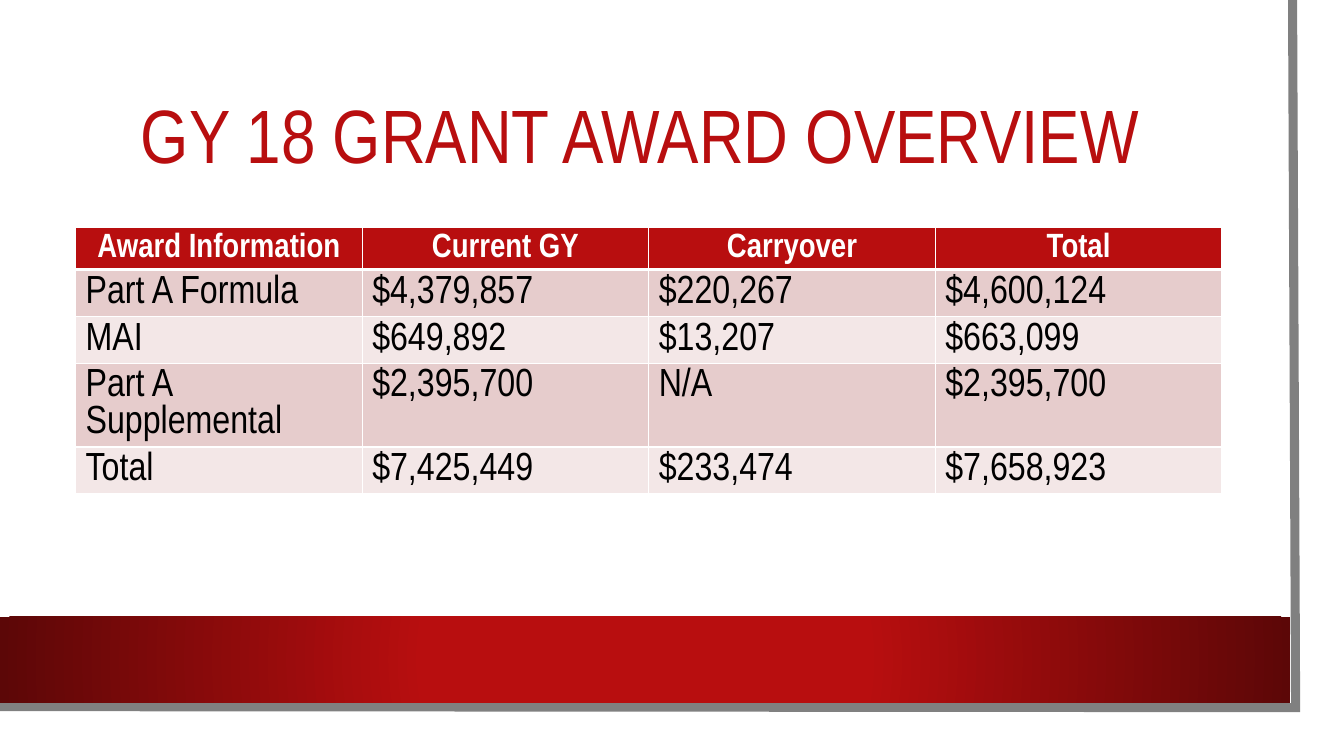
from lxml.etree import SubElement
from pptx import Presentation
from pptx.dml.color import RGBColor
from pptx.enum.shapes import MSO_SHAPE
from pptx.enum.text import MSO_ANCHOR, MSO_AUTO_SIZE, PP_ALIGN
from pptx.oxml.ns import qn
from pptx.util import Inches, Pt

# Content
TITLE = "GY 18 GRANT AWARD OVERVIEW "
AWARDS = [
    ("Award Information", "Current GY", "Carryover", "Total"),
    ("Part A Formula", "$4,379,857", "$220,267", "$4,600,124"),
    ("MAI", "$649,892", "$13,207", "$663,099"),
    ("Part A Supplemental", "$2,395,700", "N/A", "$2,395,700"),
    ("Total", "$7,425,449", "$233,474", "$7,658,923"),
]

# Style and layout
FONT = "Arial Narrow"
RED, DARK_RED, GREY, WHITE, BLACK = "B80E0F", "5C0707", "808080", "FFFFFF", "000000"
ROW_TINTS = ("F3E7E7", "E6CCCC")
LEFT, WIDTH = 0.75, 11.37
TABLE_TOP, ROW_HEIGHT = 2.26, 0.41
EDGE_POINTS = [(12.82, 0), (12.85, 7.02), (-0.03, 7.01)]


def color(hex_string):
    return RGBColor.from_string(hex_string)


def style(paragraph, size, hex_string, bold=False):
    paragraph.font.name = FONT
    paragraph.font.size = Pt(size)
    paragraph.font.bold = bold
    paragraph.font.color.rgb = color(hex_string)


def add_borders(cell, widths):
    properties = cell._tc.get_or_add_tcPr()
    for side, width in zip("LRTB", widths):
        line = SubElement(properties, qn(f"a:ln{side}"), w=str(Pt(width)))
        fill = SubElement(line, qn("a:solidFill"))
        SubElement(fill, qn("a:srgbClr"), val=WHITE)


prs = Presentation()
prs.slide_width, prs.slide_height = Inches(13.33), Inches(7.5)
slide = prs.slides.add_slide(prs.slide_layouts[5])
shapes = slide.shapes

# Grey page edge along the right and the bottom
start, *others = [(Inches(x), Inches(y)) for x, y in EDGE_POINTS]
builder = shapes.build_freeform(*start)
builder.add_line_segments(others, close=False)
page_edge = builder.convert_to_shape()
page_edge.shadow.inherit = False
page_edge.fill.background()
page_edge.line.color.rgb = color(GREY)
page_edge.line.width = Pt(6.5)
SubElement(page_edge.line._ln, qn("a:miter"), lim="800000")

# Red band, darker toward its ends
band = shapes.add_shape(MSO_SHAPE.RECTANGLE, 0, Inches(6.12), Inches(12.8), Inches(0.85))
band.shadow.inherit = False
band.line.fill.background()
band.fill.gradient()
for stop, position, tone in zip(band.fill.gradient_stops, (0.34, 1), (RED, DARK_RED)):
    stop.position = position
    stop.color.rgb = color(tone)
gradient = band._element.spPr.find(qn("a:gradFill"))
gradient.remove(gradient.find(qn("a:lin")))
radial = SubElement(gradient, qn("a:path"), path="circle")
SubElement(radial, qn("a:fillToRect"), l="50000", t="50000", r="50000", b="50000")

# Title
title = shapes.title
title.left, title.top = Inches(LEFT), Inches(0.75)
title.width, title.height = Inches(WIDTH), Inches(1.26)
title.text_frame.text = TITLE
title.text_frame.auto_size = MSO_AUTO_SIZE.NONE
title.text_frame.vertical_anchor = MSO_ANCHOR.MIDDLE
heading = title.text_frame.paragraphs[0]
heading.alignment = PP_ALIGN.CENTER
heading.line_spacing = 0.9
style(heading, 54, RED)

# Award table
awards = shapes.add_table(
    len(AWARDS), len(AWARDS[0]), Inches(LEFT), Inches(TABLE_TOP),
    Inches(WIDTH), Inches(ROW_HEIGHT * len(AWARDS))).table
for row, values in enumerate(AWARDS):
    is_header = row == 0
    for column, value in enumerate(values):
        cell = awards.cell(row, column)
        add_borders(cell, (1, 1, 3 if row == 1 else 1, 3 if is_header else 1))
        cell.fill.solid()
        cell.fill.fore_color.rgb = color(RED if is_header else ROW_TINTS[row % 2])
        cell.text = value
        entry = cell.text_frame.paragraphs[0]
        if is_header:
            entry.alignment = PP_ALIGN.CENTER
            style(entry, 24, WHITE, bold=True)
        else:
            style(entry, 28, BLACK)

prs.save("out.pptx")
